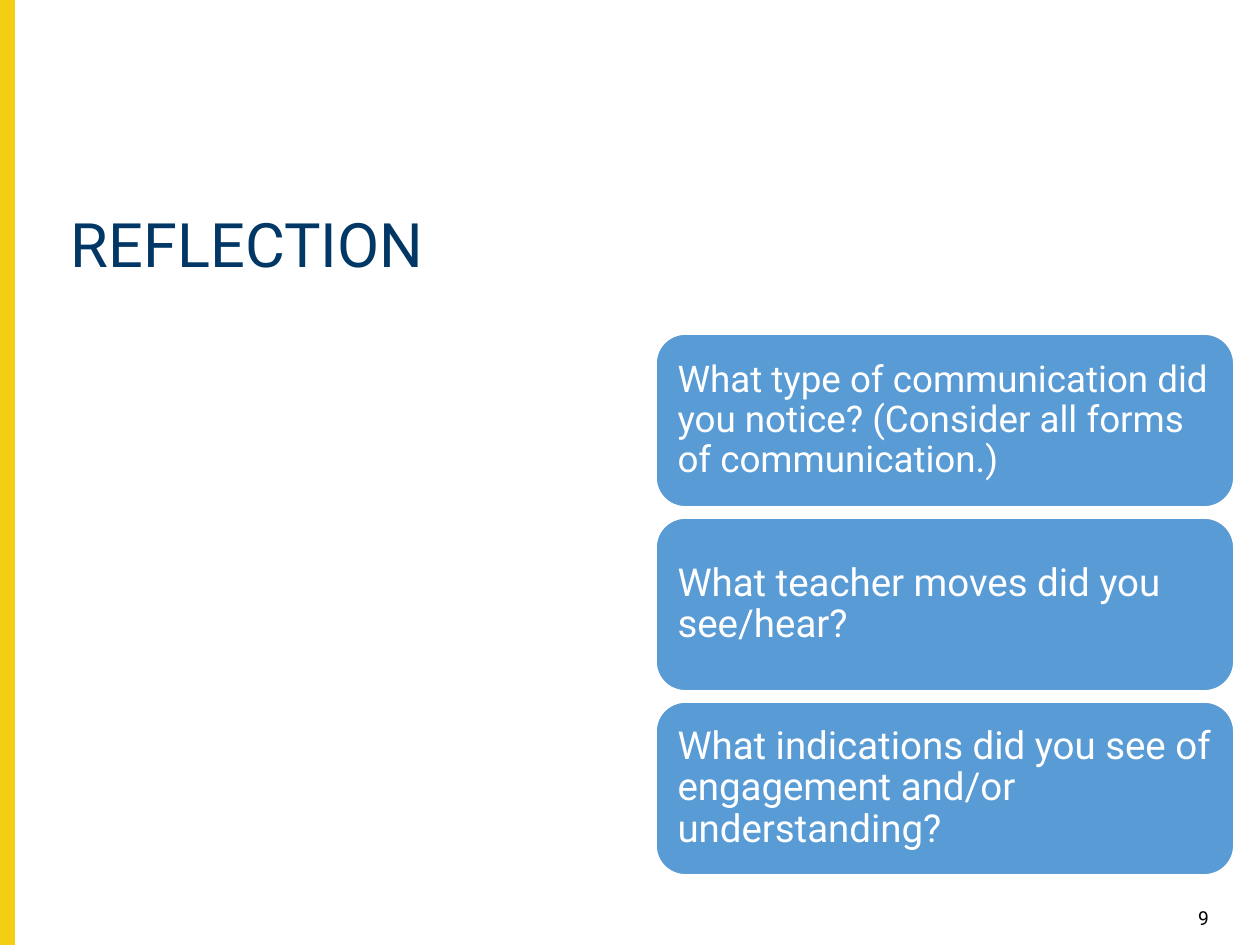
import dataclasses

import pptx
import pptx.dml.color
import pptx.enum.shapes
import pptx.enum.text
import pptx.util

RGBColor = pptx.dml.color.RGBColor
Align = pptx.enum.text.PP_ALIGN
Anchor = pptx.enum.text.MSO_ANCHOR
Shape = pptx.enum.shapes.MSO_SHAPE

YELLOW = RGBColor(0xF4, 0xCE, 0x12)
NAVY = RGBColor(0x00, 0x37, 0x64)
BLUE = RGBColor(0x59, 0x9B, 0xD5)
WHITE = RGBColor(0xFF, 0xFF, 0xFF)
BLACK = RGBColor(0x00, 0x00, 0x00)

FONT = "Roboto"
EMU_PER_PX = 914400 / 126
CARD_TOP = 334
CARD_PITCH = 184


@dataclasses.dataclass(frozen=True)
class Area:
    left: int
    top: int
    width: int
    height: int


@dataclasses.dataclass(frozen=True)
class Question:
    text: str
    size: int


QUESTIONS = [
    Question(
        "What type of communication did you notice? "
        "(Consider all forms of communication.)",
        21,
    ),
    Question("What teacher moves did you see/hear?", 22),
    Question("What indications did you see of engagement and/or understanding?", 22),
]


def px(length: int) -> pptx.util.Emu:
    return pptx.util.Emu(round(length * EMU_PER_PX))


def place(area: Area) -> list[pptx.util.Emu]:
    return [px(length) for length in dataclasses.astuple(area)]


def write(box, text: str, size: int, color: RGBColor, align=Align.LEFT,
          anchor=Anchor.TOP, spacing: float = 0.9, side: int = 13,
          edge: int = 13) -> None:
    frame = box.text_frame
    frame.word_wrap = True
    frame.auto_size = pptx.enum.text.MSO_AUTO_SIZE.NONE
    frame.vertical_anchor = anchor
    frame.margin_left = px(13)
    frame.margin_right = px(side)
    frame.margin_top = frame.margin_bottom = px(edge)
    frame.text = text
    para = frame.paragraphs[0]
    para.alignment = align
    para.line_spacing = spacing
    para.font.name = FONT
    para.font.size = pptx.util.Pt(size)
    para.font.color.rgb = color


def add_block(page, kind, area: Area, fill: RGBColor, line: RGBColor):
    block = page.shapes.add_shape(kind, *place(area))
    block.shadow.inherit = False
    block.fill.solid()
    block.fill.fore_color.rgb = fill
    block.line.color.rgb = line
    block.line.width = pptx.util.Pt(1)
    return block


def add_card(page, question: Question, top: int) -> None:
    card = add_block(page, Shape.ROUNDED_RECTANGLE, Area(656, top, 578, 173), BLUE, WHITE)
    card.adjustments[0] = 0.17
    write(card, question.text, question.size, WHITE, anchor=Anchor.MIDDLE, side=10)


def main() -> None:
    deck = pptx.Presentation()
    deck.slide_width = px(1260)
    deck.slide_height = px(945)
    page = deck.slides.add_slide(deck.slide_layouts[5])

    title = page.shapes.title
    title.left, title.top, title.width, title.height = place(Area(58, 202, 1176, 100))
    write(title, "REFLECTION", 35, NAVY)

    add_block(page, Shape.RECTANGLE, Area(0, 0, 14, 945), YELLOW, YELLOW)

    number = page.shapes.add_textbox(*place(Area(1159, 900, 63, 26)))
    write(number, "9", 11, BLACK, align=Align.RIGHT, spacing=1.0, edge=6)

    for index, question in enumerate(QUESTIONS):
        add_card(page, question, CARD_TOP + index * CARD_PITCH)

    deck.save("out.pptx")


if __name__ == "__main__":
    main()
